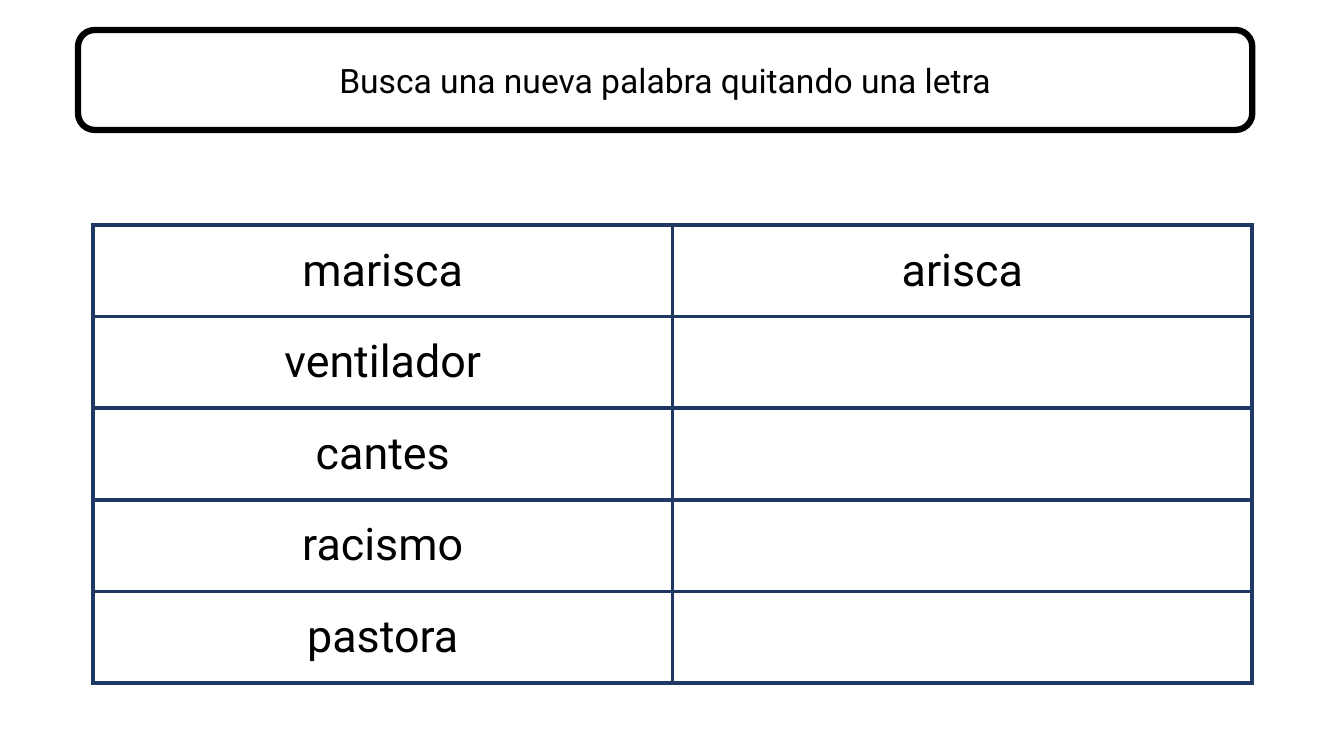
from lxml import etree
from pptx import Presentation
from pptx import util as u
from pptx.dml.color import RGBColor
from pptx.enum import shapes, text
from pptx.oxml.ns import qn

BLACK = RGBColor(0x00, 0x00, 0x00)
WHITE = RGBColor(0xFF, 0xFF, 0xFF)
NAVY = RGBColor(0x20, 0x38, 0x64)
EMU_PER_PX = 914400 / 100.8

WORDS = [
    ("marisca", "arisca"),
    ("ventilador", ""),
    ("cantes", ""),
    ("racismo", ""),
    ("pastora", ""),
]


def px(*lengths):
    return [u.Emu(round(n * EMU_PER_PX)) for n in lengths]


class Deck:
    font = "Roboto"

    def __init__(self):
        self.prs = Presentation()
        self.prs.slide_width = u.Inches(13.33)
        self.prs.slide_height = u.Inches(7.5)
        self.s = self.prs.slides.add_slide(self.prs.slide_layouts[5])

    def centred(self, tf, words, size):
        p = tf.paragraphs[0]
        p.alignment = text.PP_ALIGN.CENTER
        r = p.add_run()
        r.text = words
        r.font.color.rgb = BLACK
        for name, value in {"name": self.font, "size": u.Pt(size)}.items():
            setattr(r.font, name, value)

    def box(self, x, y, w, h):
        sp = self.s.shapes.add_shape(
            shapes.MSO_SHAPE.ROUNDED_RECTANGLE, *px(x, y, w, h))
        sp.shadow.inherit = False
        sp.fill.solid()
        sp.fill.fore_color.rgb = WHITE
        sp.line.color.rgb = BLACK
        sp.line.width = u.Pt(4.5)

    def title(self, words, x, y, w, h, size):
        sp = self.s.shapes.title
        for name, value in zip(("left", "top", "width", "height"), px(x, y, w, h)):
            setattr(sp, name, value)
        tf = sp.text_frame
        style = {"word_wrap": True, "auto_size": text.MSO_AUTO_SIZE.NONE,
                 "vertical_anchor": text.MSO_ANCHOR.MIDDLE}
        for name, value in style.items():
            setattr(tf, name, value)
        self.centred(tf, words, size)
        self.s.shapes.element.append(sp.element)

    def borders(self, cell, color, width):
        tcPr = cell._tc.get_or_add_tcPr()
        for side in ("a:lnL", "a:lnR", "a:lnT", "a:lnB"):
            ln = etree.SubElement(tcPr, qn(side), w=str(u.Pt(width)))
            fill = etree.SubElement(ln, qn("a:solidFill"))
            etree.SubElement(fill, qn("a:srgbClr"), val=str(color))

    def table(self, rows, x, y, w, h, size):
        tbl = self.s.shapes.add_table(
            len(rows), len(rows[0]), *px(x, y, w, h)).table
        tbl.first_row = tbl.horz_banding = False
        for i, row in enumerate(rows):
            for j, word in enumerate(row):
                cell = tbl.cell(i, j)
                self.borders(cell, NAVY, 3)
                cell.fill.solid()
                cell.fill.fore_color.rgb = WHITE
                cell.vertical_anchor = text.MSO_ANCHOR.MIDDLE
                if word:
                    self.centred(cell.text_frame, word, size)


def main():
    deck = Deck()
    deck.box(78, 30, 1174, 100)
    deck.title("Busca una nueva palabra quitando una letra", 78, 30, 1174, 100, 24)
    deck.table(WORDS, 93, 225, 1159, 458, 32)
    deck.prs.save("out.pptx")


if __name__ == "__main__":
    main()
